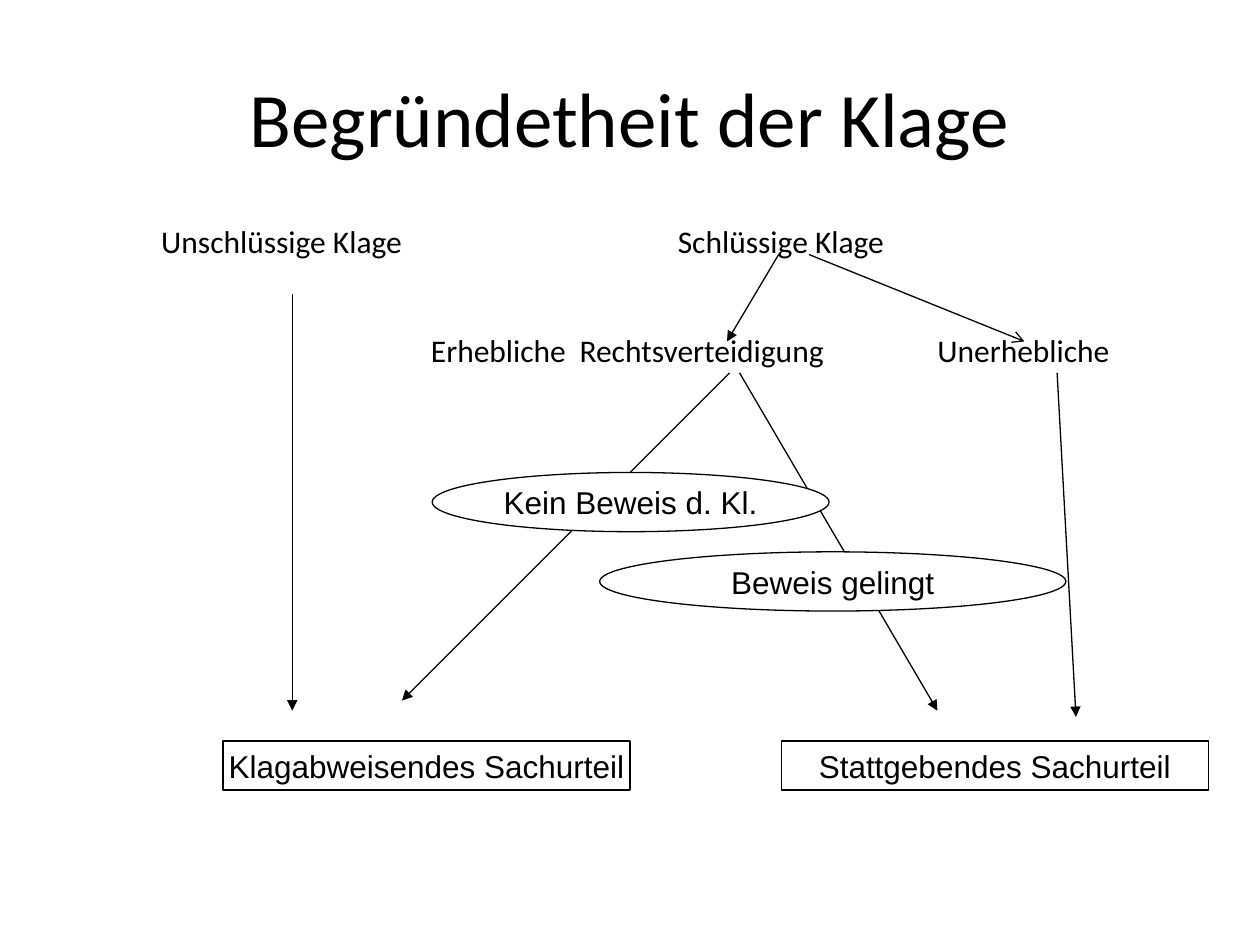
from typing import NamedTuple

from lxml.etree import SubElement
from pptx import Presentation
from pptx.dml.color import RGBColor
from pptx.enum.shapes import MSO_CONNECTOR, MSO_SHAPE
from pptx.enum.text import MSO_ANCHOR, PP_ALIGN
from pptx.oxml.ns import qn
from pptx.util import Inches, Pt

BLACK, WHITE = "000000", "FFFFFF"
THIN = Pt(0.75)


class Label(NamedTuple):
    text: str
    left: float
    top: float
    width: float


class Node(NamedTuple):
    text: str
    kind: MSO_SHAPE
    left: float
    top: float
    width: float
    height: float


class Arrow(NamedTuple):
    start: tuple[float, float]
    end: tuple[float, float]
    head: str = "triangle"


def color(code: str) -> RGBColor:
    return RGBColor.from_string(code)


def write(shape, text: str, font: str, size: int, align: PP_ALIGN, wrap: bool) -> None:
    frame = shape.text_frame
    form = {"margin_left": 0, "margin_right": 0, "margin_top": 0, "margin_bottom": 0,
            "vertical_anchor": MSO_ANCHOR.MIDDLE, "word_wrap": wrap}
    for name, value in form.items():
        setattr(frame, name, value)
    para = frame.paragraphs[0]
    para.text = text
    para.alignment = align
    for name, value in {"name": font, "size": Pt(size)}.items():
        setattr(para.font, name, value)
    para.font.color.rgb = color(BLACK)


def add_label(slide, item: Label) -> None:
    box = slide.shapes.add_textbox(*map(Inches, (item.left, item.top, item.width, 0.4)))
    write(box, item.text, "Calibri", 18, PP_ALIGN.LEFT, True)


def add_node(slide, item: Node) -> None:
    place = map(Inches, (item.left, item.top, item.width, item.height))
    shape = slide.shapes.add_shape(item.kind, *place)
    shape.shadow.inherit = False
    shape.fill.solid()
    shape.fill.fore_color.rgb = color(WHITE)
    shape.line.color.rgb = color(BLACK)
    shape.line.width = THIN
    write(shape, item.text, "Arial", 18, PP_ALIGN.CENTER, False)


def add_arrow(slide, item: Arrow) -> None:
    ends = map(Inches, item.start + item.end)
    line = slide.shapes.add_connector(MSO_CONNECTOR.STRAIGHT, *ends)
    line.line.color.rgb = color(BLACK)
    line.line.width = THIN
    SubElement(line.line._get_or_add_ln(), qn("a:tailEnd"), type=item.head)
    SubElement(line._element.spPr, qn("a:effectLst"))


# Rows of the decision tree
CLAIM, REPLY, RULING = 1.71, 2.58, 5.88

LABELS = [
    Label("Unschlüssige Klage", 1.28, CLAIM, 2.1),
    Label("Schlüssige Klage", 5.38, CLAIM, 1.9),
    Label("Erhebliche", 3.42, REPLY, 1.15),
    Label("Rechtsverteidigung", 4.6, REPLY, 2.1),
    Label("Unerhebliche", 7.44, REPLY, 1.6),
]

ARROWS = [
    Arrow((2.32, 2.33), (2.32, 5.64)),
    Arrow((5.79, 2.96), (3.19, 5.56)),
    Arrow((6.18, 2.02), (5.77, 2.71)),
    Arrow((5.87, 2.96), (7.44, 5.64)),
    Arrow((8.39, 2.96), (8.54, 5.69)),
    Arrow((6.42, 2.02), (8.13, 2.71), "arrow"),
]

NODES = [
    Node("Kein Beweis d. Kl.", MSO_SHAPE.OVAL, 3.43, 3.75, 3.15, 0.47),
    Node("Beweis gelingt", MSO_SHAPE.OVAL, 4.76, 4.38, 3.7, 0.47),
    Node("Klagabweisendes Sachurteil", MSO_SHAPE.RECTANGLE, 1.77, RULING, 3.23, 0.39),
    Node("Stattgebendes Sachurteil", MSO_SHAPE.RECTANGLE, 6.2, RULING, 3.39, 0.39),
]


def main() -> None:
    deck = Presentation()
    deck.slide_width, deck.slide_height = Inches(10), Inches(7.5)
    slide = deck.slides.add_slide(deck.slide_layouts[6])

    # Title
    title = slide.shapes.add_textbox(*map(Inches, (0.5, 0.3, 9, 1.25)))
    write(title, "Begründetheit der Klage", "Calibri", 44, PP_ALIGN.CENTER, True)

    # Tree: labels, then arrows, then nodes on top
    for label in LABELS:
        add_label(slide, label)
    for arrow in ARROWS:
        add_arrow(slide, arrow)
    for node in NODES:
        add_node(slide, node)

    deck.save("out.pptx")


if __name__ == "__main__":
    main()
